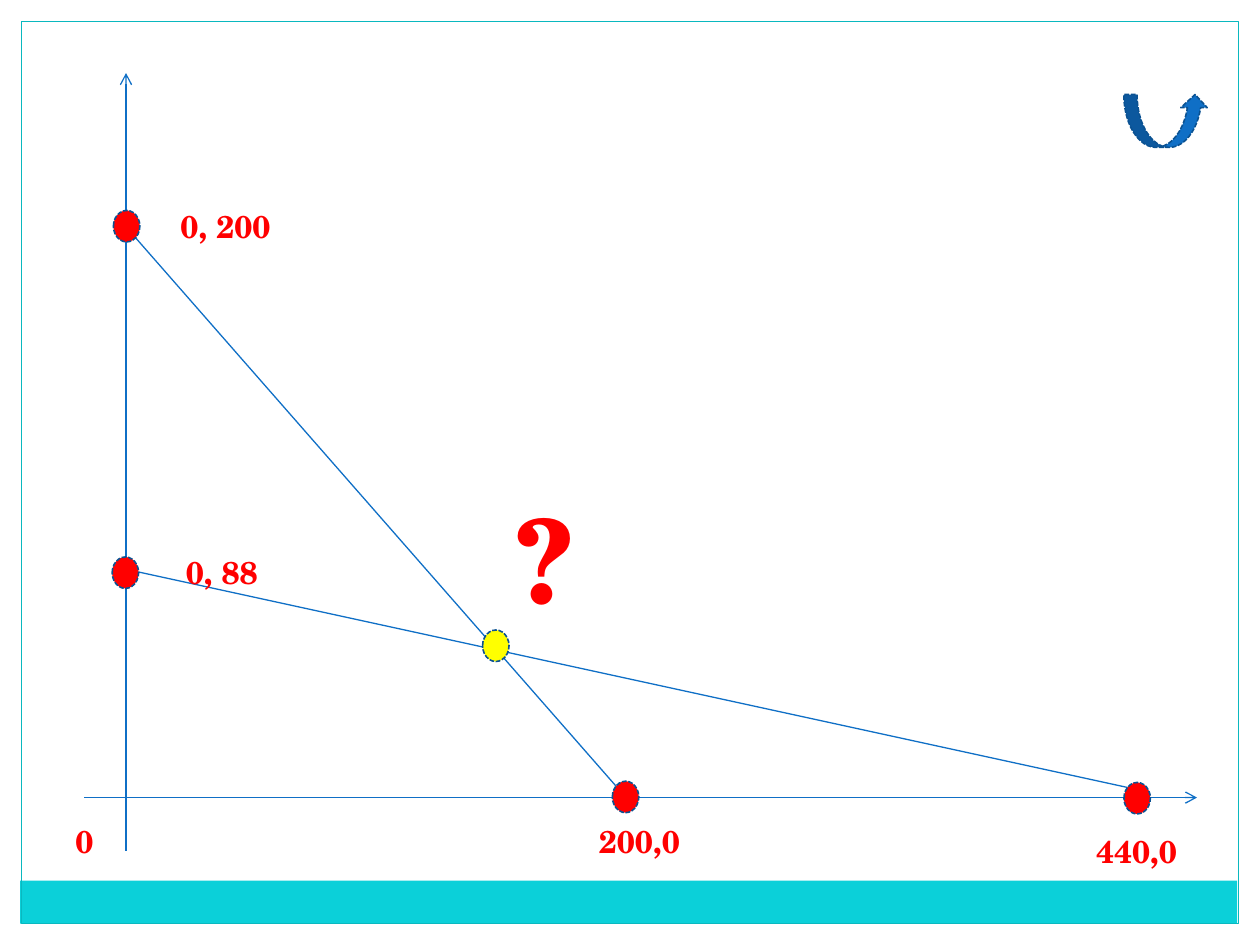
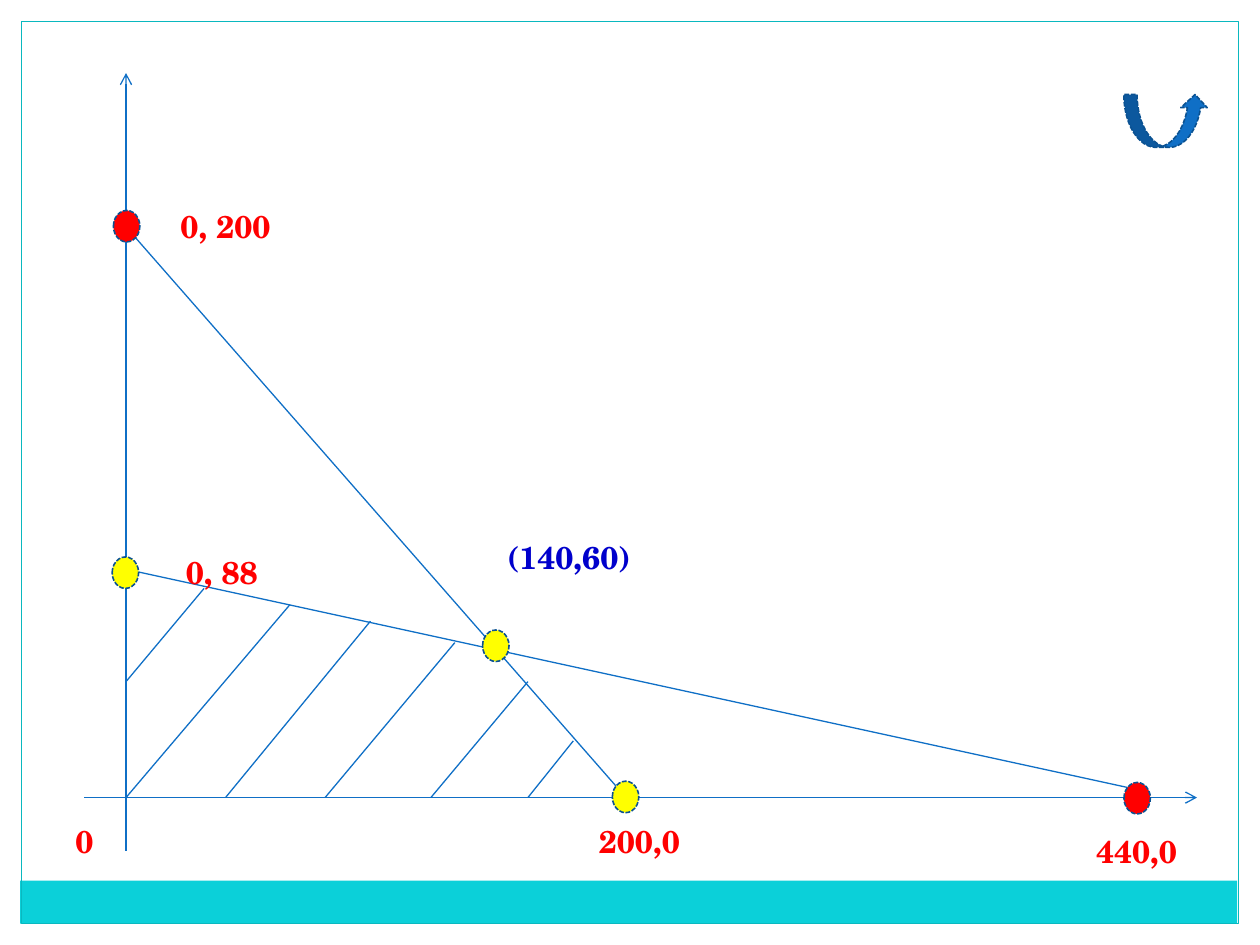
from lxml.etree import SubElement
from pptx import Presentation
from pptx.dml.color import RGBColor
from pptx.enum.dml import MSO_LINE
from pptx.enum.shapes import MSO_CONNECTOR, MSO_SHAPE
from pptx.enum.text import MSO_ANCHOR, PP_ALIGN
from pptx.oxml.ns import qn
from pptx.util import Pt

PX = 9144  # EMU in one px, 100 px to the inch
PAGE_WIDTH, PAGE_HEIGHT = 1000, 750
FONT = "TeX Gyre Schola"
COLORS = {
    "white": "FFFFFF", "band": "0BD0D9", "frame": "0AB8BF", "line": "0F6FC6",
    "outline": "0B5292", "red": "FF0000", "yellow": "FFFF00", "blue": "0000CC",
}

# Frame parts: left, top, width, height, fill, line
FRAME = [
    (0, 0, PAGE_WIDTH, 17, "white", None),
    (983, 0, 17, PAGE_HEIGHT, "white", None),
    (0, 0, 17, PAGE_HEIGHT, "white", None),
    (16, 699, 966, 34, "band", None),
    (17, 17, 966, 716, None, "frame"),
]

# Lines: start x, start y, end x, end y
AXES = [(100, 675, 100, 58), (67, 633, 950, 633)]
CONSTRAINTS = [(107, 188, 489, 624), (110, 454, 895, 625)]
HATCHING = [
    (100, 633, 230, 480), (179, 633, 294, 493), (258, 633, 361, 510),
    (342, 633, 419, 541), (100, 541, 162, 467), (419, 633, 455, 588),
]

# Left and top of each dot
DOT_SIZE = (21, 25)
DOTS = {
    "0, 200": (90, 167), "200,0": (486, 620), "0, 88": (89, 442),
    "440,0": (892, 621), "crossing": (383, 500),
}
RETURN_ARROW = (892, 75, 67, 42)

# Labels: text, left, top, width
LABEL_HEIGHT = 52
LABELS = [
    ("0", 42, 641, 50), ("0, 200", 125, 153, 108), ("200,0", 451, 641, 113),
    ("0, 88", 122, 428, 108), ("440,0", 848, 649, 108),
]

SLIDES = [
    {"yellow": {"crossing"}, "hatching": [],
     "answer": ("?", 378, 416, 108), "style": {"size": 66, "color": "red"}},
    {"yellow": {"crossing", "0, 88", "200,0"}, "hatching": HATCHING,
     "answer": ("(140,60)", 378, 416, 147), "style": {"size": 18, "color": "blue"}},
]


def scaled(lengths):
    return [length * PX for length in lengths]


def rgb(name):
    return RGBColor.from_string(COLORS[name])


def add_figure(page, kind, place, fill=None, line=None, width=0.75, dash=None):
    shape = page.shapes.add_shape(kind, *scaled(place))
    shape.shadow.inherit = False
    for part, color in ((shape.fill, fill), (shape.line.fill, line)):
        if color:
            part.solid()
            part.fore_color.rgb = rgb(color)
        else:
            part.background()
    if line:
        shape.line.width = Pt(width)
        shape.line.dash_style = dash


def add_dashed(page, kind, place, fill):
    add_figure(page, kind, place, fill, "outline", 0.9, MSO_LINE.SQUARE_DOT)


def add_line(page, ends, arrow=False):
    connector = page.shapes.add_connector(MSO_CONNECTOR.STRAIGHT, *scaled(ends))
    connector.line.color.rgb = rgb("line")
    connector.line.width = Pt(0.75)
    if arrow:
        SubElement(connector.line._get_or_add_ln(), qn("a:tailEnd"), type="arrow")
    SubElement(connector._element.spPr, qn("a:effectLst"))


def add_label(page, text, left, top, width, size=18, color="red"):
    box = page.shapes.add_textbox(*scaled((left, top, width, LABEL_HEIGHT)))
    frame = box.text_frame
    settings = {
        "word_wrap": True, "vertical_anchor": MSO_ANCHOR.MIDDLE,
        "margin_left": 0, "margin_right": 0, "margin_top": 0, "margin_bottom": 0,
    }
    for name, value in settings.items():
        setattr(frame, name, value)
    para = frame.paragraphs[0]
    para.alignment = PP_ALIGN.CENTER
    span = para.add_run()
    span.text = text
    for name, value in {"name": FONT, "size": Pt(size), "bold": True}.items():
        setattr(span.font, name, value)
    span.font.color.rgb = rgb(color)


def add_graph(deck, content):
    page = deck.slides.add_slide(deck.slide_layouts[6])
    for *place, fill, line in FRAME:
        add_figure(page, MSO_SHAPE.RECTANGLE, place, fill, line)
    for ends in AXES:
        add_line(page, ends, arrow=True)
    for ends in CONSTRAINTS + content["hatching"]:
        add_line(page, ends)
    for name, corner in DOTS.items():
        fill = "yellow" if name in content["yellow"] else "red"
        add_dashed(page, MSO_SHAPE.OVAL, corner + DOT_SIZE, fill)
    add_dashed(page, MSO_SHAPE.CURVED_UP_ARROW, RETURN_ARROW, "line")
    for label in LABELS:
        add_label(page, *label)
    add_label(page, *content["answer"], **content["style"])


def main():
    deck = Presentation()
    deck.slide_width, deck.slide_height = scaled((PAGE_WIDTH, PAGE_HEIGHT))
    for content in SLIDES:
        add_graph(deck, content)
    deck.save("out.pptx")


if __name__ == "__main__":
    main()
